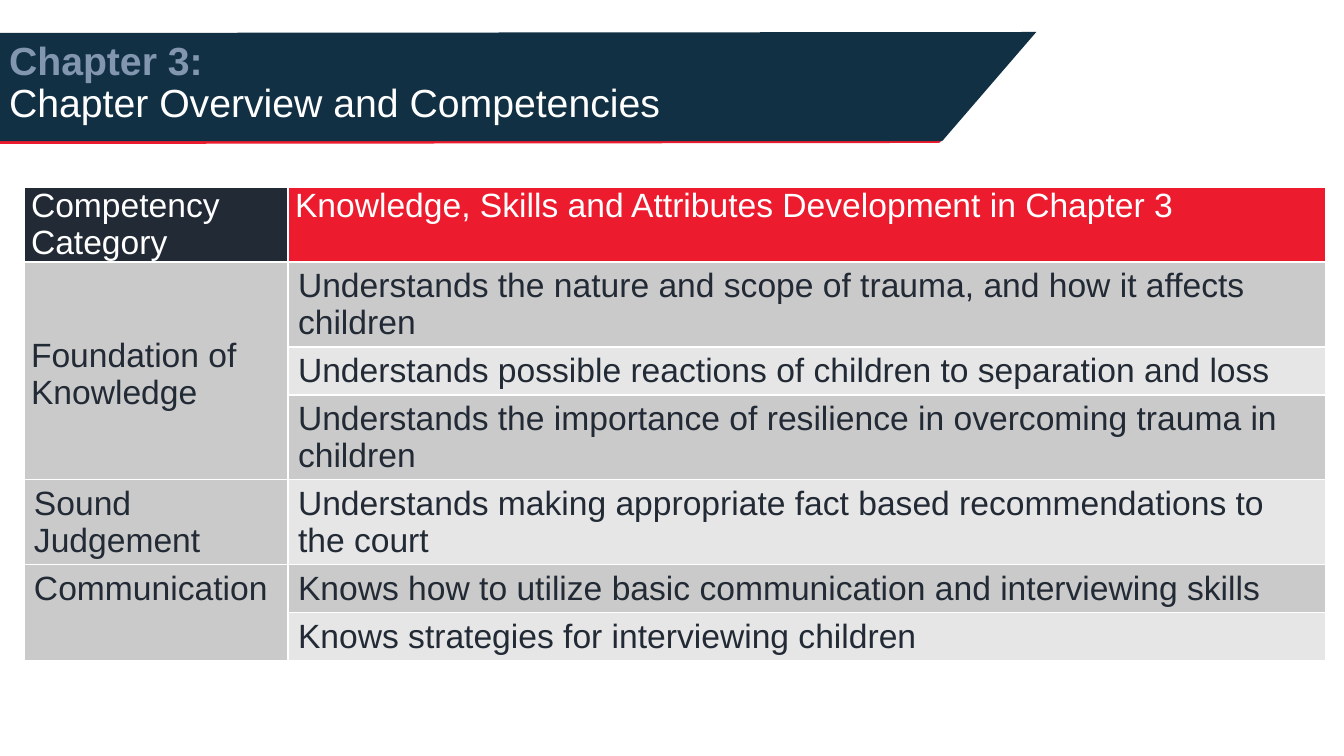
from pptx import Presentation
from pptx import util as u
from pptx.dml.color import RGBColor
from pptx.enum import text

PX = 914400 / 100.8  # EMU in one px
FONT = "Arial"

WHITE = RGBColor(0xFF, 0xFF, 0xFF)
NAVY = RGBColor(0x11, 0x30, 0x44)
RED = RGBColor(0xED, 0x1B, 0x2E)
SLATE = RGBColor(0x22, 0x2A, 0x35)
STEEL = RGBColor(0x82, 0x96, 0xB0)
GREY = RGBColor(0xCA, 0xCA, 0xCA)
LIGHT_GREY = RGBColor(0xE6, 0xE6, 0xE6)

HEADERS = ("Competency Category",
           "Knowledge, Skills and Attributes Development in Chapter 3")
COMPETENCIES = [
    ("Foundation of Knowledge", [
        "Understands the nature and scope of trauma, and how it affects children",
        "Understands possible reactions of children to separation and loss",
        "Understands the importance of resilience in overcoming trauma in children"]),
    ("Sound Judgement", [
        "Understands making appropriate fact based recommendations to the court"]),
    ("Communication", [
        "Knows how to utilize basic communication and interviewing skills",
        "Knows strategies for interviewing children"]),
]
COLUMN_WIDTHS = (264, 1037)
ROW_HEIGHTS = (75, 85, 48, 85, 85, 48, 48)
HEADER_MARGINS = (7, 0)
BODY_MARGINS = (10, 5)
FOUNDATION_MARGINS = (7, 75)  # the label starts two lines down


def px(length):
    return u.Emu(round(length * PX))


def add_run(paragraph, wording, size, color, bold=False):
    run = paragraph.add_run()
    run.text = wording
    run.font.name = FONT
    run.font.size = u.Pt(size)
    run.font.bold = bold
    run.font.color.rgb = color


def add_polygon(slide, points, color):
    builder = slide.shapes.build_freeform(*points[0], scale=PX)
    builder.add_line_segments(points[1:], close=True)
    shape = builder.convert_to_shape()
    shape.shadow.inherit = False
    shape.fill.solid()
    shape.fill.fore_color.rgb = color
    shape.line.fill.background()


def add_banner(slide, left, top, width, height):
    right, bottom = left + width, top + height
    # Red edge below the navy band
    add_polygon(slide, [(left, bottom - 2), (right - 93, bottom - 2),
                        (right - 97, bottom + 2), (left, bottom + 3)], RED)
    add_polygon(slide, [(right, top), (left, top + 1),
                        (left, bottom), (right - 94, bottom)], NAVY)


def place_title(slide, left, top, width, height):
    title = slide.shapes.title
    title.left, title.top = px(left), px(top)
    title.width, title.height = px(width), px(height)
    frame = title.text_frame
    frame.word_wrap = True
    frame.auto_size = text.MSO_AUTO_SIZE.NONE
    frame.vertical_anchor = text.MSO_ANCHOR.MIDDLE
    paragraph = frame.paragraphs[0]
    paragraph.alignment = text.PP_ALIGN.LEFT
    paragraph.line_spacing = 0.9
    add_run(paragraph, "Chapter 3:", 28, STEEL, bold=True)
    paragraph.add_line_break()
    add_run(paragraph, "Chapter Overview and Competencies", 28, WHITE)
    # Bring the title in front of the banner
    title.element.getparent().append(title.element)


def fill_cell(cell, wording, fill, color=SLATE, margins=BODY_MARGINS):
    side, top = margins
    cell.margin_left = cell.margin_right = px(side)
    cell.margin_top = px(top)
    cell.margin_bottom = px(min(top, 5))
    cell.fill.solid()
    cell.fill.fore_color.rgb = fill
    add_run(cell.text_frame.paragraphs[0], wording, 24, color)


def add_competency_table(slide, left, top):
    frame = slide.shapes.add_table(
        len(ROW_HEIGHTS), len(COLUMN_WIDTHS), px(left), px(top),
        px(sum(COLUMN_WIDTHS)), px(sum(ROW_HEIGHTS)))
    table = frame.table
    table.horz_banding = False
    for column, width in zip(table.columns, COLUMN_WIDTHS):
        column.width = px(width)
    for row, height in zip(table.rows, ROW_HEIGHTS):
        row.height = px(height)

    # Header row
    for index, (wording, fill) in enumerate(zip(HEADERS, (SLATE, RED))):
        fill_cell(table.cell(0, index), wording, fill, WHITE, HEADER_MARGINS)

    # One merged category cell beside its skills
    row = 1
    for category, skills in COMPETENCIES:
        label = table.cell(row, 0)
        if len(skills) > 1:
            label.merge(table.cell(row + len(skills) - 1, 0))
        margins = FOUNDATION_MARGINS if row == 1 else BODY_MARGINS
        fill_cell(label, category, GREY, margins=margins)
        for skill in skills:
            fill_cell(table.cell(row, 1), skill, GREY if row % 2 else LIGHT_GREY)
            row += 1


def main():
    presentation = Presentation()
    presentation.slide_width = u.Inches(13.33)
    presentation.slide_height = u.Inches(7.5)
    slide = presentation.slides.add_slide(presentation.slide_layouts[5])
    add_banner(slide, -1, 32, 1037, 109)
    add_competency_table(slide, 24, 187)
    place_title(slide, -1, 11, 1159, 146)
    presentation.save("out.pptx")


if __name__ == "__main__":
    main()
